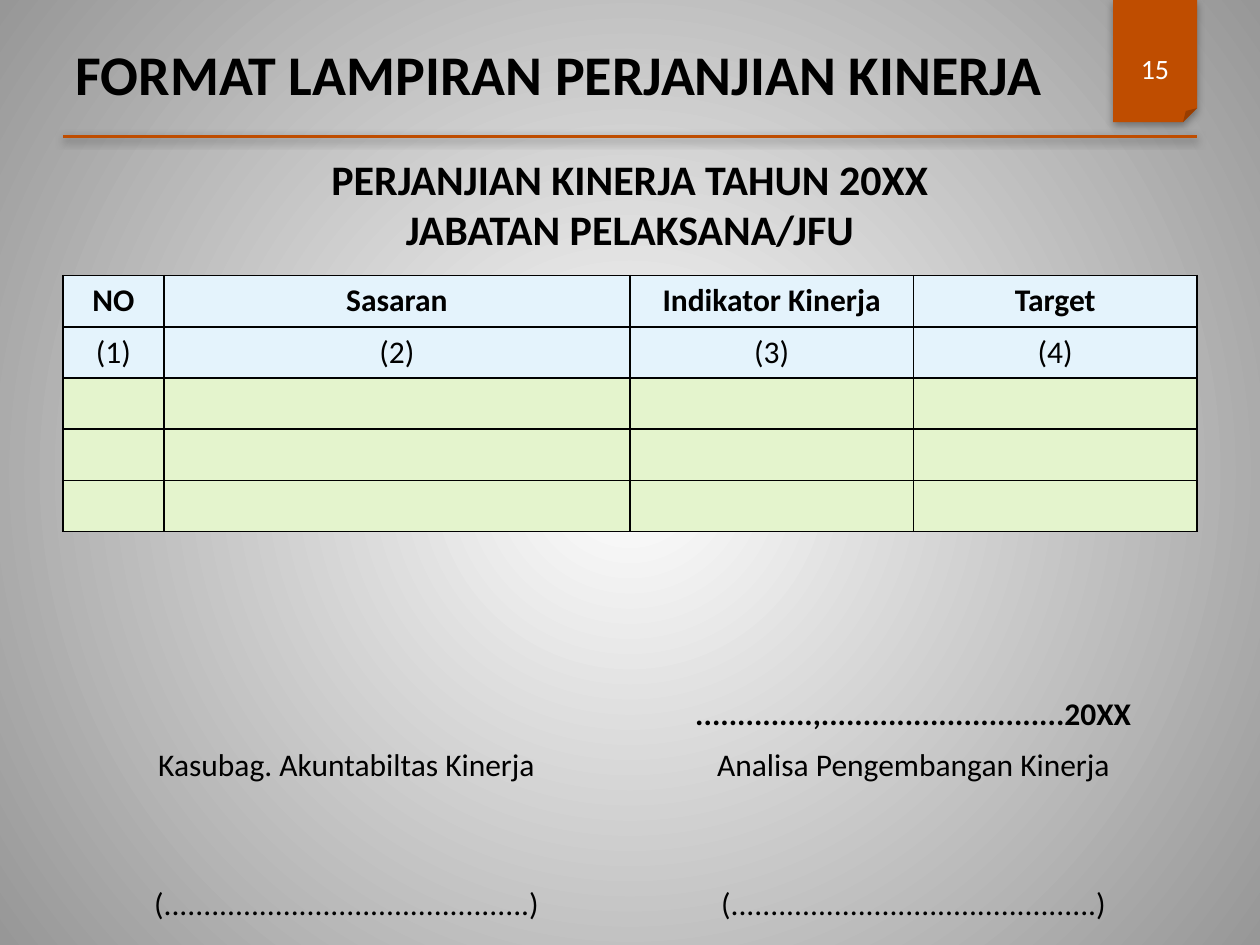
from dataclasses import dataclass
from typing import Optional

from lxml.etree import SubElement
from pptx import Presentation
from pptx.dml.color import RGBColor
from pptx.enum.shapes import MSO_CONNECTOR, MSO_SHAPE
from pptx.enum.text import MSO_ANCHOR, PP_ALIGN
from pptx.oxml.ns import qn
from pptx.util import Inches, Pt

BLACK = RGBColor(0x00, 0x00, 0x00)
WHITE = RGBColor(0xFF, 0xFF, 0xFF)
GRAY = RGBColor(0x97, 0x97, 0x97)
ORANGE = RGBColor(0xBF, 0x4D, 0x00)
BLUE = RGBColor(0xE4, 0xF3, 0xFC)
GREEN = RGBColor(0xE4, 0xF4, 0xCD)

GRID = Inches(10) / 120  # the slide is 120 columns by 90 rows
MARGIN, CONTENT = 6, 108
TABLE_ROW = 4.88


def units(count: float) -> int:
    return round(count * GRID)


@dataclass(frozen=True)
class Box:
    column: float
    row: float
    columns: float
    rows: float

    def lengths(self) -> tuple[int, ...]:
        return tuple(units(n) for n in (self.column, self.row, self.columns, self.rows))


@dataclass(frozen=True)
class Label:
    box: Box
    lines: tuple[str, ...]
    font: dict
    align: PP_ALIGN = PP_ALIGN.CENTER
    anchor: MSO_ANCHOR = MSO_ANCHOR.MIDDLE


@dataclass(frozen=True)
class TableRow:
    texts: tuple[str, ...]
    fill: Optional[RGBColor] = None
    bold: bool = False
    height: float = TABLE_ROW
    anchor: MSO_ANCHOR = MSO_ANCHOR.TOP


@dataclass(frozen=True)
class Grid:
    row: float
    widths: tuple[float, ...]
    rows: tuple[TableRow, ...]
    border: Optional[RGBColor] = None


FORMAT = {"name": "Calibri", "size": Pt(18), "bold": False}

LABELS = (
    Label(Box(MARGIN, 2, 101, 10), ("FORMAT LAMPIRAN PERJANJIAN KINERJA",),
          {"size": Pt(32), "bold": True}, align=PP_ALIGN.LEFT),
    Label(Box(106, 4, 8, 5), ("15",), {"size": Pt(16), "color": WHITE}),
    Label(Box(MARGIN, 14, CONTENT, 10.9),
          ("PERJANJIAN KINERJA TAHUN 20XX", "JABATAN PELAKSANA/JFU"),
          {"size": Pt(24), "bold": True}, anchor=MSO_ANCHOR.TOP),
)

SIGNATURE = "(" + "." * 46 + ")"
TABLES = (
    Grid(26.25, (9.6, 44.4, 27, 27), (
        TableRow(("NO", "Sasaran", "Indikator Kinerja", "Target"), BLUE, bold=True),
        TableRow(("(1)", "(2)", "(3)", "(4)"), BLUE),
        *[TableRow(("",) * 4, GREEN)] * 3,
    ), BLACK),
    Grid(65.6, (CONTENT / 2,) * 2, (
        TableRow(("", "." * 14 + "," + "." * 29 + "20XX"), bold=True),
        TableRow(("Kasubag. Akuntabiltas Kinerja", "Analisa Pengembangan Kinerja")),
        TableRow(("", "")),
        TableRow((SIGNATURE,) * 2, height=8.4, anchor=MSO_ANCHOR.BOTTOM),
    )),
)


def format_font(font, changes: dict) -> None:
    values = {**FORMAT, **changes}
    font.color.rgb = values.pop("color", BLACK)
    for name, value in values.items():
        setattr(font, name, value)


def add_color(parent, color: RGBColor):
    return SubElement(parent, qn("a:srgbClr"), val=str(color))


def add_shadow(shape, opacity: int, distance: float) -> None:
    properties = shape.element.spPr
    effects = properties.find(qn("a:effectLst"))
    if effects is None:
        effects = SubElement(properties, qn("a:effectLst"))
    shadow = SubElement(effects, qn("a:outerShdw"), blurRad=str(Pt(5)),
                        dist=str(Pt(distance)), dir="5400000", rotWithShape="0")
    SubElement(add_color(shadow, BLACK), qn("a:alpha"), val=str(opacity * 1000))


def set_background(slide) -> None:
    fill = slide.background.fill
    fill.gradient()
    for stop, color in zip(fill.gradient_stops, (WHITE, GRAY)):
        stop.color.rgb = color
    gradient = slide.element.find(".//" + qn("a:gradFill"))
    gradient.remove(gradient.find(qn("a:lin")))
    circle = SubElement(gradient, qn("a:path"), path="circle")
    SubElement(circle, qn("a:fillToRect"), l="50000", t="50000", r="50000", b="50000")


def add_header(slide) -> None:
    tab = slide.shapes.add_shape(MSO_SHAPE.FOLDED_CORNER, *Box(106, 0, 8, 11.64).lengths())
    tab.fill.solid()
    tab.fill.fore_color.rgb = ORANGE
    tab.line.fill.background()
    tab.shadow.inherit = False
    add_shadow(tab, 35, 1.8)

    rule = slide.shapes.add_connector(MSO_CONNECTOR.STRAIGHT, units(MARGIN), units(13),
                                      units(MARGIN + CONTENT), units(13))
    rule.line.color.rgb = ORANGE
    rule.line.width = Pt(2)
    add_shadow(rule, 38, 1.6)


def add_label(slide, label: Label) -> None:
    frame = slide.shapes.add_textbox(*label.box.lengths()).text_frame
    frame.word_wrap = True
    frame.vertical_anchor = label.anchor
    frame.text = "\n".join(label.lines)
    for paragraph in frame.paragraphs:
        paragraph.alignment = label.align
        for run in paragraph.runs:
            format_font(run.font, label.font)


def set_borders(cell, color: Optional[RGBColor]) -> None:
    properties = cell._tc.get_or_add_tcPr()
    for side in ("a:lnL", "a:lnR", "a:lnT", "a:lnB"):
        line = SubElement(properties, qn(side), w=str(Pt(1)))
        if color is None:
            SubElement(line, qn("a:noFill"))
        else:
            add_color(SubElement(line, qn("a:solidFill")), color)


def fill_cell(cell, text: str, row: TableRow, border: Optional[RGBColor]) -> None:
    set_borders(cell, border)
    if row.fill is None:
        cell.fill.background()
    else:
        cell.fill.solid()
        cell.fill.fore_color.rgb = row.fill
    cell.vertical_anchor = row.anchor
    paragraph = cell.text_frame.paragraphs[0]
    paragraph.alignment = PP_ALIGN.CENTER
    if text:
        run = paragraph.add_run()
        run.text = text
        format_font(run.font, {"bold": row.bold})


def add_grid(slide, grid: Grid) -> None:
    box = Box(MARGIN, grid.row, sum(grid.widths), sum(row.height for row in grid.rows))
    table = slide.shapes.add_table(len(grid.rows), len(grid.widths), *box.lengths()).table
    table.first_row = table.horz_banding = False
    for column, width in zip(table.columns, grid.widths):
        column.width = units(width)
    for table_row, row in zip(table.rows, grid.rows):
        table_row.height = units(row.height)
        for cell, text in zip(table_row.cells, row.texts):
            fill_cell(cell, text, row, grid.border)


def main() -> None:
    presentation = Presentation()
    presentation.slide_width, presentation.slide_height = units(120), units(90)
    slide = presentation.slides.add_slide(presentation.slide_layouts[6])
    # Backdrop and page header
    set_background(slide)
    add_header(slide)
    # Headings and page number
    for label in LABELS:
        add_label(slide, label)
    # Performance targets and signatures
    for grid in TABLES:
        add_grid(slide, grid)
    presentation.save("out.pptx")


if __name__ == "__main__":
    main()
